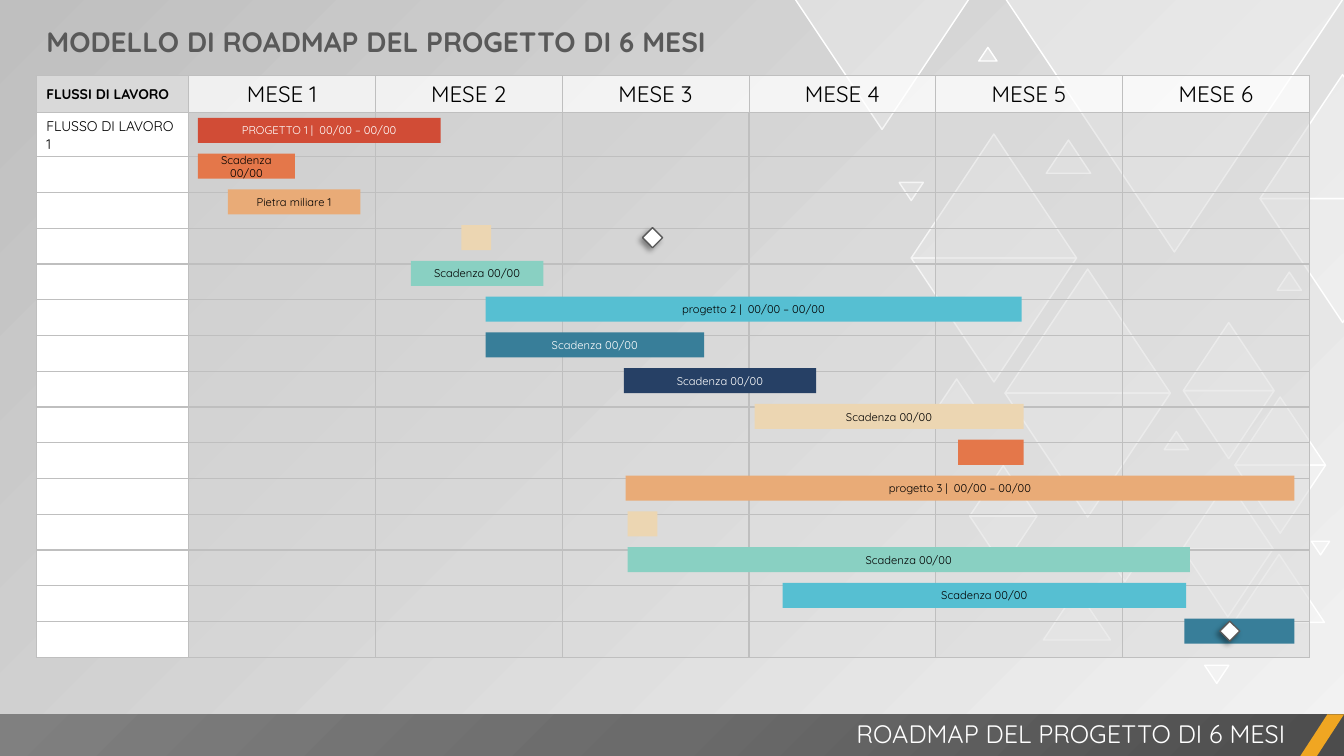
from dataclasses import dataclass

from pptx import Presentation
from pptx.dml.color import RGBColor
from pptx.enum.shapes import MSO_SHAPE as Shape
from pptx.enum.text import MSO_ANCHOR as Anchor, MSO_AUTO_SIZE as AutoSize, PP_ALIGN as Align
from pptx.oxml import parse_xml
from pptx.oxml.ns import nsdecls
from pptx.util import Emu, Inches, Pt

COLORS = {
    "white": "FFFFFF", "black": "000000", "border": "BFBFBF", "light": "F2F2F2",
    "cell": "D9D9D9", "title": "595959", "accent": "F0A622",
    "footer_dark": "4C4C4C", "footer_mid": "6B6B6B", "footer_light": "808080",
    "red": "D14C36", "orange": "E4774A", "peach": "E9AB77", "sand": "ECD6B2",
    "mint": "89D0C2", "sky": "56BFD2", "teal": "387E99", "navy": "264065",
}
FONT = "Quicksand"
WIDTH, HEIGHT = Inches(13.333), Inches(7.5)
MONTHS, LANES = 6, 15
GRID_LEFT, GRID_TOP = 0.027 * WIDTH, 0.1 * HEIGHT
LABEL_W, MONTH_W = 0.1133 * WIDTH, 0.139 * WIDTH
HEAD_H, LANE_H = 0.0493 * HEIGHT, 0.0473 * HEIGHT
BAR_TOP, BAR_H = 0.156 * HEIGHT, 0.7 * LANE_H
DIAMOND = 0.8 * BAR_H


@dataclass
class Triangle:
    x: float
    y: float
    width: float
    turns: tuple[int, ...] = (0,)


@dataclass
class Bar:
    lane: int
    start: float
    months: float
    color: str
    text: str = ""
    ink: str = "black"


@dataclass
class Milestone:
    lane: int
    start: float


UP, DOWN, PAIR = (0,), (180,), (0, 180)
TRIANGLES = [
    Triangle(67.8, 17.73, 12.3, PAIR), Triangle(74.78, 35.6, 12.3, PAIR),
    Triangle(74.78, -0.27, 25.2, DOWN), Triangle(91.8, 73.33, 6.75, UP),
    Triangle(87.98, 63.6, 6.75, PAIR), Triangle(88.05, 42.67, 6.75, PAIR),
    Triangle(91.88, 52.53, 6.75, PAIR), Triangle(77.63, 78, 5, UP),
    Triangle(72.15, 61.6, 5, PAIR), Triangle(93.75, 9.87, 12.3, PAIR),
    Triangle(82.05, 72.53, 3.3, DOWN), Triangle(69.53, 50.13, 3.3, UP),
    Triangle(86.63, 57.07, 1.8, UP), Triangle(89.63, 88, 1.8, DOWN),
    Triangle(66.9, 24.13, 1.8, DOWN), Triangle(95.03, 36, 1.8, UP),
    Triangle(72.83, 6.27, 1.35, UP), Triangle(97.58, 71.6, 1.35, DOWN),
    Triangle(77.85, 18.53, 3.3, UP), Triangle(59.1, -0.27, 13.05, DOWN),
]
DUE = "Scadenza 00/00"
BARS = [
    Bar(0, 0.05, 1.3, "red", "PROGETTO 1 |  00/00 – 00/00", "white"),
    Bar(1, 0.05, 0.52, "orange", DUE),
    Bar(2, 0.21, 0.71, "peach", "Pietra miliare 1"),
    Bar(3, 1.46, 0.16, "sand"),
    Bar(4, 1.19, 0.71, "mint", DUE),
    Bar(5, 1.59, 2.87, "sky", "progetto 2 |  00/00 – 00/00"),
    Bar(6, 1.59, 1.17, "teal", DUE, "white"),
    Bar(7, 2.33, 1.03, "navy", DUE, "white"),
    Bar(8, 3.03, 1.44, "sand", DUE),
    Bar(9, 4.12, 0.35, "orange"),
    Bar(10, 2.34, 3.58, "peach", "progetto 3 |  00/00 – 00/00"),
    Bar(11, 2.35, 0.16, "sand"),
    Bar(12, 2.35, 3.01, "mint", DUE),
    Bar(13, 3.18, 2.16, "sky", DUE),
    Bar(14, 5.33, 0.59, "teal"),
]
MILESTONES = [Milestone(3, 2.43), Milestone(14, 5.52)]


def rgb(name: str) -> RGBColor:
    return RGBColor.from_string(COLORS[name])


def share(x: float, y: float, w: float, h: float) -> list[Emu]:
    return [Emu(round(v * full / 100)) for v, full in zip((x, y, w, h), (WIDTH, HEIGHT) * 2)]


def month_x(months: float) -> float:
    return GRID_LEFT + LABEL_W + months * MONTH_W


def write(tf, text: str, size: float, color: str, bold=False, align=Align.LEFT) -> None:
    p = tf.paragraphs[0]
    p.alignment = align
    r = p.add_run()
    r.text = text
    for key, value in {"name": FONT, "size": Pt(size), "bold": bold}.items():
        setattr(r.font, key, value)
    r.font.color.rgb = rgb(color)


def set_alpha(props, percent: int) -> None:
    for clr in props.xpath("./a:solidFill/a:srgbClr"):
        clr.append(parse_xml(f'<a:alpha {nsdecls("a")} val="{percent * 1000}"/>'))


def add_gradient(fill, owner, stops: list[tuple[int, str, int]], direction: str) -> None:
    fill.gradient()
    old = owner.xpath(".//a:gradFill")[0]
    gs = "".join(
        f'<a:gs pos="{pos * 1000}"><a:srgbClr val="{COLORS[c]}"><a:alpha val="{a * 1000}"/>'
        "</a:srgbClr></a:gs>" for pos, c, a in stops)
    new = f'<a:gradFill {nsdecls("a")}><a:gsLst>{gs}</a:gsLst>{direction}</a:gradFill>'
    old.getparent().replace(old, parse_xml(new))


def add_shape(shapes, kind: Shape, box, color: str, line: str = ""):
    sp = shapes.add_shape(kind, *(Emu(round(v)) for v in box))
    sp.shadow.inherit = False
    sp.fill.solid()
    sp.fill.fore_color.rgb = rgb(color)
    if line:
        sp.line.color.rgb = rgb(line)
        sp.line.width = Pt(1)
    else:
        sp.line.fill.background()
    return sp


def add_triangle(shapes, t: Triangle) -> None:
    x, y, w, _ = share(t.x, t.y, t.width, 0)
    for i, turn in enumerate(t.turns):
        sp = add_shape(shapes, Shape.ISOSCELES_TRIANGLE,
                       (x, y + i * 0.75 * w, w, 0.75 * w), "white", "white")
        sp.rotation = turn
        set_alpha(sp._element.spPr, 30)


def add_bar(shapes, b: Bar) -> None:
    box = (month_x(b.start), BAR_TOP + b.lane * LANE_H, b.months * MONTH_W, BAR_H)
    sp = add_shape(shapes, Shape.RECTANGLE, box, b.color)
    if b.text:
        write(sp.text_frame, b.text, 8, b.ink, align=Align.CENTER)


def add_milestone(shapes, m: Milestone) -> None:
    top = BAR_TOP + m.lane * LANE_H + (BAR_H - DIAMOND) / 2
    sp = add_shape(shapes, Shape.DIAMOND, (month_x(m.start), top, DIAMOND, DIAMOND), "white", "title")
    sp._element.spPr.xpath("./a:effectLst")[0].append(parse_xml(
        f'<a:outerShdw {nsdecls("a")} blurRad="{Pt(4)}" dist="{Pt(3)}" dir="8100000" algn="tr" '
        f'rotWithShape="0"><a:srgbClr val="{COLORS["black"]}"><a:alpha val="40000"/></a:srgbClr></a:outerShdw>'))


def format_cell(cell, color: str, alpha: int, widths: dict[str, float]) -> None:
    cell.vertical_anchor = Anchor.MIDDLE
    cell.fill.solid()
    cell.fill.fore_color.rgb = rgb(color)
    tcPr = cell._tc.get_or_add_tcPr()
    set_alpha(tcPr, alpha)
    for i, (side, width) in enumerate(widths.items()):
        tcPr.insert(i, parse_xml(
            f'<a:ln{side} {nsdecls("a")} w="{Pt(width)}"><a:solidFill>'
            f'<a:srgbClr val="{COLORS["border"]}"/></a:solidFill></a:ln{side}>'))


def add_roadmap(shapes) -> None:
    box = (GRID_LEFT, GRID_TOP, LABEL_W + MONTHS * MONTH_W, HEAD_H + LANES * LANE_H)
    table = shapes.add_table(LANES + 1, MONTHS + 1, *(Emu(round(v)) for v in box)).table
    table.first_row = table.horz_banding = False
    for i, col in enumerate(table.columns):
        col.width = Emu(round(MONTH_W if i else LABEL_W))
    for i, row in enumerate(table.rows):
        row.height = Emu(round(LANE_H if i else HEAD_H))
        for j, cell in enumerate(row.cells):
            if i == 0:
                color, alpha = ("white", 75) if j else ("cell", 100)
            else:
                color, alpha = ("cell", 25 if j in (3, 4) else 50) if j else ("white", 100)
            thin = 1 if i else 0.5
            format_cell(cell, color, alpha, {"L": thin, "R": thin, "T": thin, "B": 1})
            if i == 0 and j:
                write(cell.text_frame, f"MESE {j}", 16, "black", align=Align.CENTER)
            elif j == 0 and i < 2:
                label = "FLUSSO DI LAVORO 1" if i else "FLUSSI DI LAVORO"
                write(cell.text_frame, label, 10, "black", bold=i == 0)
            else:
                cell.text_frame.paragraphs[0]._p.append(
                    parse_xml(f'<a:endParaRPr {nsdecls("a")} sz="1000"/>'))


def main() -> None:
    prs = Presentation()
    prs.slide_width, prs.slide_height = WIDTH, HEIGHT
    s = prs.slides.add_slide(prs.slide_layouts[5])
    add_gradient(s.background.fill, s._element, [(0, "light", 40), (100, "border", 100)],
                 '<a:lin ang="13500000" scaled="0"/>')
    title = s.shapes.title
    title.left, title.top, title.width, title.height = share(2.7, 2.53, 59.93, 5.87)
    title.text_frame.auto_size = AutoSize.NONE
    title.text_frame.vertical_anchor = Anchor.MIDDLE
    write(title.text_frame, "MODELLO DI ROADMAP DEL PROGETTO DI 6 MESI", 20, "title", bold=True)

    backdrop = s.shapes.add_group_shape()
    for t in TRIANGLES:
        add_triangle(backdrop.shapes, t)

    footer = add_shape(s.shapes, Shape.RECTANGLE, share(0, 94.5, 100, 5.5), "footer_mid")
    stops = [(0, "footer_dark", 100), (50, "footer_mid", 100), (100, "footer_light", 100)]
    add_gradient(footer.fill, footer._element, stops,
                 '<a:path path="circle"><a:fillToRect l="100000" t="100000"/></a:path>')
    slash = add_shape(s.shapes, Shape.PARALLELOGRAM, share(96.75, 94.5, 3.25, 5.5), "accent")
    slash.adjustments[0] = 0.65
    tf = s.shapes.add_textbox(*share(39.38, 94.4, 57, 5.33)).text_frame
    tf.word_wrap = True
    write(tf, "ROADMAP DEL PROGETTO DI 6 MESI", 18, "white", align=Align.RIGHT)

    add_roadmap(s.shapes)
    for b in BARS:
        add_bar(s.shapes, b)
    for m in MILESTONES:
        add_milestone(s.shapes, m)
    prs.save("out.pptx")


if __name__ == "__main__":
    main()
